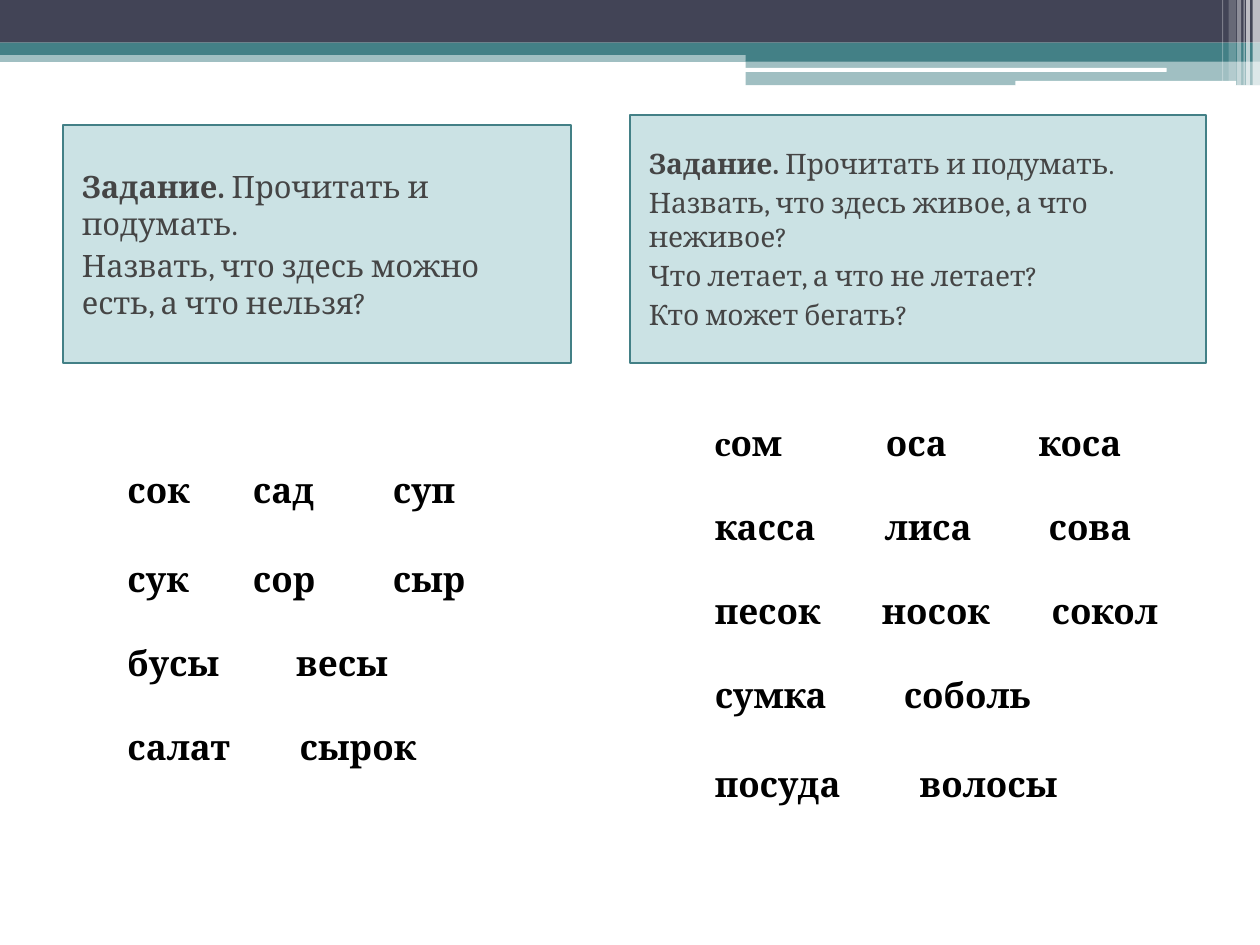
"""Build a slide with two reading tasks and their word lists."""
from lxml.etree import SubElement
from pptx import Presentation
from pptx.dml.color import RGBColor
from pptx.enum.shapes import MSO_SHAPE
from pptx.enum.text import MSO_ANCHOR
from pptx.oxml.ns import qn
from pptx.util import Cm, Pt

COLORS = {"navy": "424456", "teal": "438086", "panel": "328E97",
          "white": "FFFFFF", "gray": "454545", "black": "000000"}
FONT = "Cambria"

BANDS = [
    ((0, 1.02, 25.4, 0.23), "teal", 50),
    ((0, 0, 25.4, 0.86), "navy", 100),
    ((0, 0.86, 25.4, 0.25), "teal", 100),
    ((15.03, 0.99, 10.37, 0.25), "teal", 100),
    ((15.03, 1.22, 10.37, 0.5), "teal", 50),
]
HIGHLIGHTS = [(15.01, 1.37, 8.51, 0.08), (20.47, 1.63, 4.45, 0.1)]
STRIPES = [
    (25.25, 0.15, 1.73, 65), (25.12, 0.08, 1.73, 65), (25.07, 0.02, 1.73, 60),
    (24.94, 0.08, 1.73, 40), (24.77, 0.15, 1.63, 20), (24.64, 0.02, 1.63, 30),
]
TASKS = [
    {"at": (1.27, 2.52, 10.24, 4.8), "size": 17.6, "lines": [
        ("Задание. ", "Прочитать и подумать."),
        ("", "Назвать, что здесь можно есть, а что нельзя?")]},
    {"at": (12.7, 2.32, 11.61, 5), "size": 16.1, "lines": [
        ("Задание. ", "Прочитать и подумать."),
        ("", "Назвать, что здесь живое, а что неживое?"),
        ("", "Что летает, а что не летает?"),
        ("", "Кто может бегать?")]},
]
WORD_LISTS = [
    {"at": (1.27, 7.52, 10.03, 9.5), "top": 1.08, "rows": [
        ("сок сад суп", (2.53, 5.35), 0),
        ("сук сор сыр", (2.53, 5.35), 3),
        ("бусы весы", (3.4,), 0),
        ("салат сырок", (3.47,), 0)]},
    {"at": (13.11, 7.52, 11.23, 10.8), "top": 0.13, "rows": [
        ("cом оса коса", (3.45, 6.53), 0),
        ("касса лиса сова", (3.43, 6.73), 0),
        ("песок носок сокол", (3.37, 6.79), 0),
        ("сумка соболь", (3.81,), 0),
        ("посуда волосы", (4.13,), 3)]},
]


def rgb(name):
    return RGBColor.from_string(COLORS[name])


def add_panel(slide, at, color, opacity=100, preset=MSO_SHAPE.RECTANGLE, outline=None):
    panel = slide.shapes.add_shape(preset, *map(Cm, at))
    panel.shadow.inherit = False
    panel.fill.solid()
    panel.fill.fore_color.rgb = rgb(color)
    if opacity < 100:
        tint = panel.fill._xPr.find(qn("a:solidFill"))[0]
        SubElement(tint, qn("a:alpha"), val=str(opacity * 1000))
    if outline:
        panel.line.color.rgb = rgb(outline)
        panel.line.width = Pt(1)
    else:
        panel.line.fill.background()
    return panel


def add_text(paragraph, text, size, color, bold=False):
    run = paragraph.add_run()
    run.text = text
    run.font.name = FONT
    run.font.size = Pt(size)
    run.font.bold = bold
    run.font.color.rgb = rgb(color)


def next_paragraph(frame, index):
    return frame.add_paragraph() if index else frame.paragraphs[0]


def add_task(slide, task):
    frame = add_panel(slide, task["at"], "panel", 25, outline="teal").text_frame
    frame.word_wrap = True
    frame.vertical_anchor = MSO_ANCHOR.MIDDLE
    frame.margin_left = Cm(0.38)
    for index, (lead, body) in enumerate(task["lines"]):
        paragraph = next_paragraph(frame, index)
        paragraph.alignment = 1
        paragraph.space_before = Pt(3)
        if lead:
            add_text(paragraph, lead, task["size"], "gray", bold=True)
        add_text(paragraph, body, task["size"], "gray")


def add_words(slide, words):
    frame = slide.shapes.add_textbox(*map(Cm, words["at"])).text_frame
    frame.word_wrap = True
    frame.margin_left = Cm(1.3)
    frame.margin_top = Cm(words["top"])
    for index, (row, stops, gap) in enumerate(words["rows"]):
        paragraph = next_paragraph(frame, index)
        paragraph.line_spacing = 2.0
        paragraph.space_before = Pt(gap)
        tabs = SubElement(paragraph._p.get_or_add_pPr(), qn("a:tabLst"))
        for stop in stops:
            SubElement(tabs, qn("a:tab"), pos=str(int(Cm(stop))), algn="l")
        add_text(paragraph, "\t".join(row.split()), 20, "black", bold=True)


def main():
    deck = Presentation()
    deck.slide_width, deck.slide_height = Cm(25.4), Cm(19.05)
    slide = deck.slides.add_slide(deck.slide_layouts[6])
    for at, color, opacity in BANDS:
        add_panel(slide, at, color, opacity)
    for at in HIGHLIGHTS:
        add_panel(slide, at, "white", preset=MSO_SHAPE.ROUNDED_RECTANGLE)
    for left, width, height, opacity in STRIPES:
        add_panel(slide, (left, 0, width, height), "white", opacity)
    for task in TASKS:
        add_task(slide, task)
    for words in WORD_LISTS:
        add_words(slide, words)
    deck.save("out.pptx")


if __name__ == "__main__":
    main()
